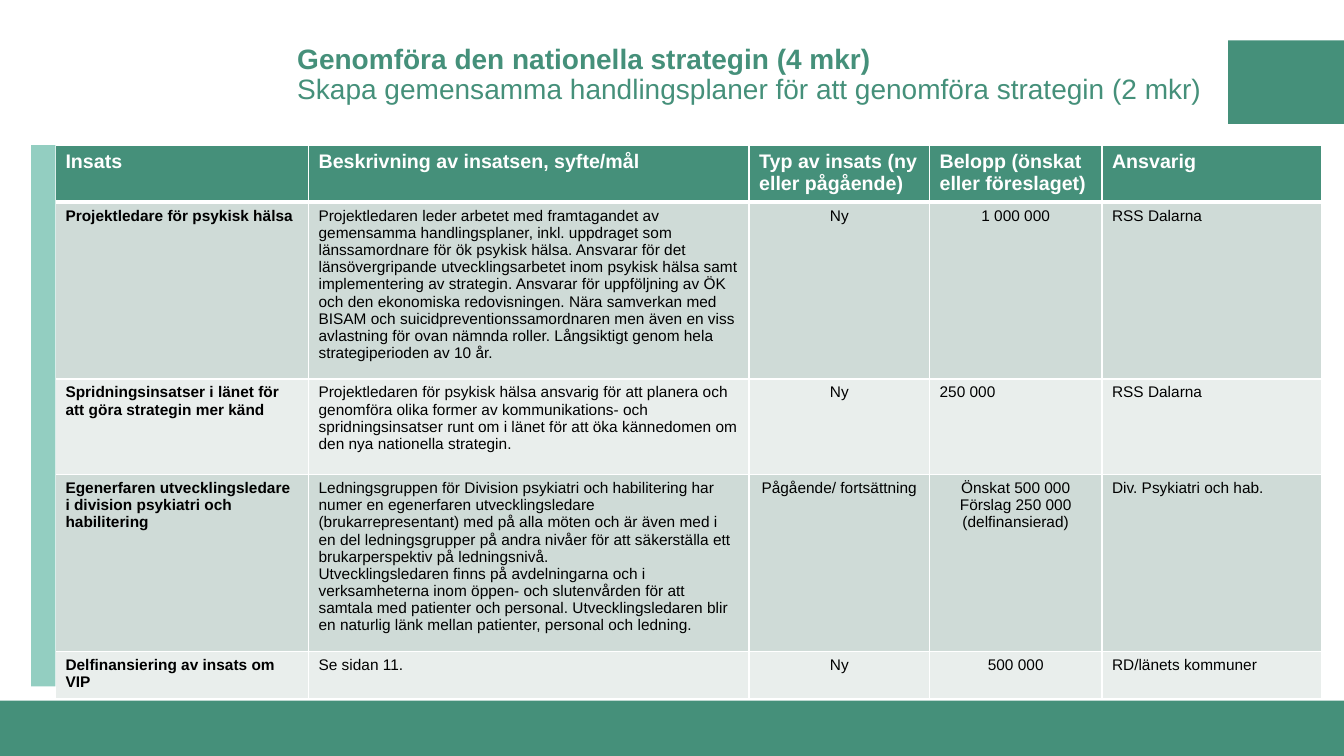
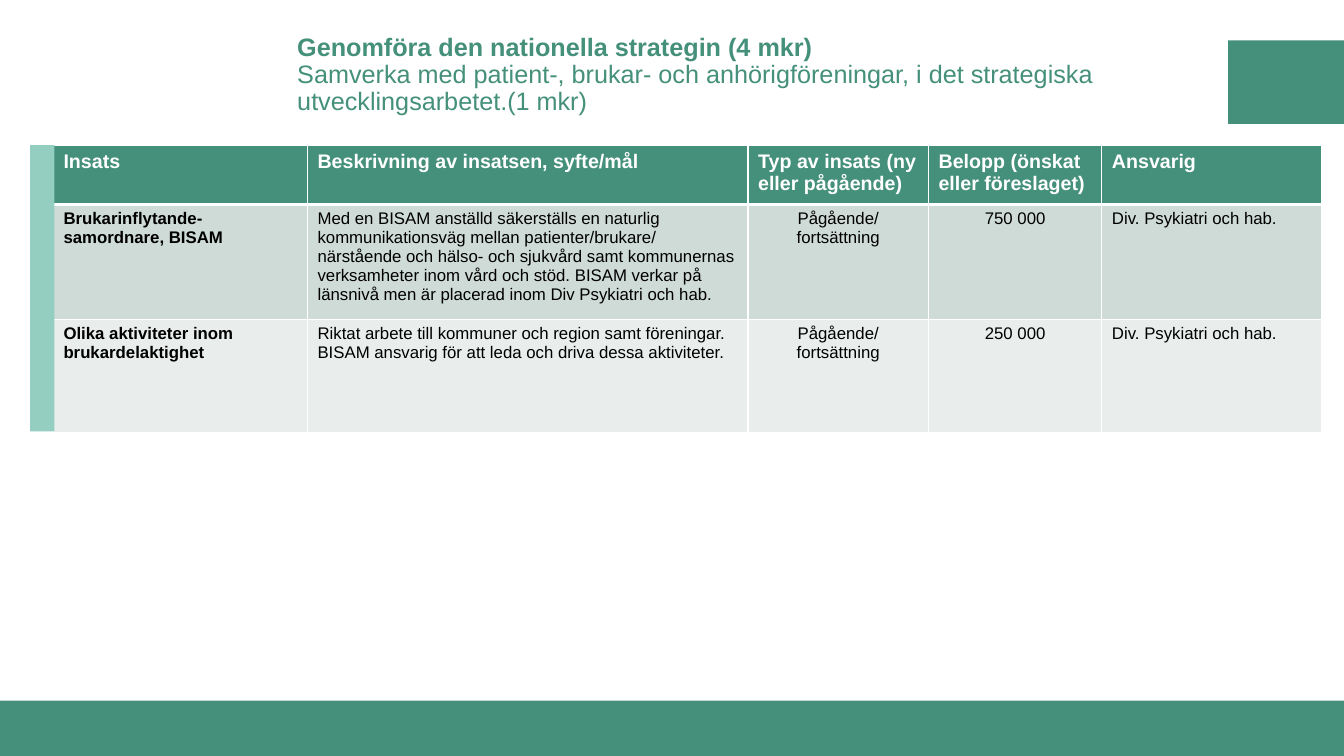
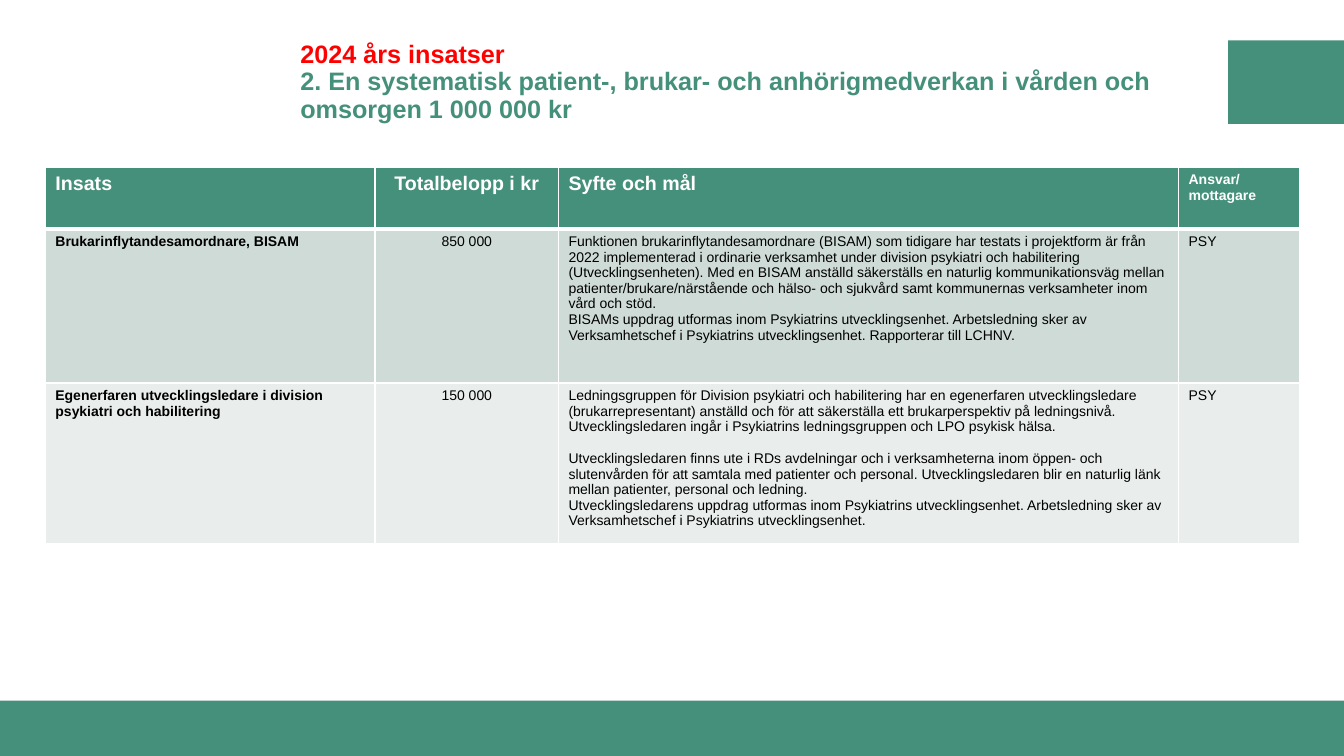
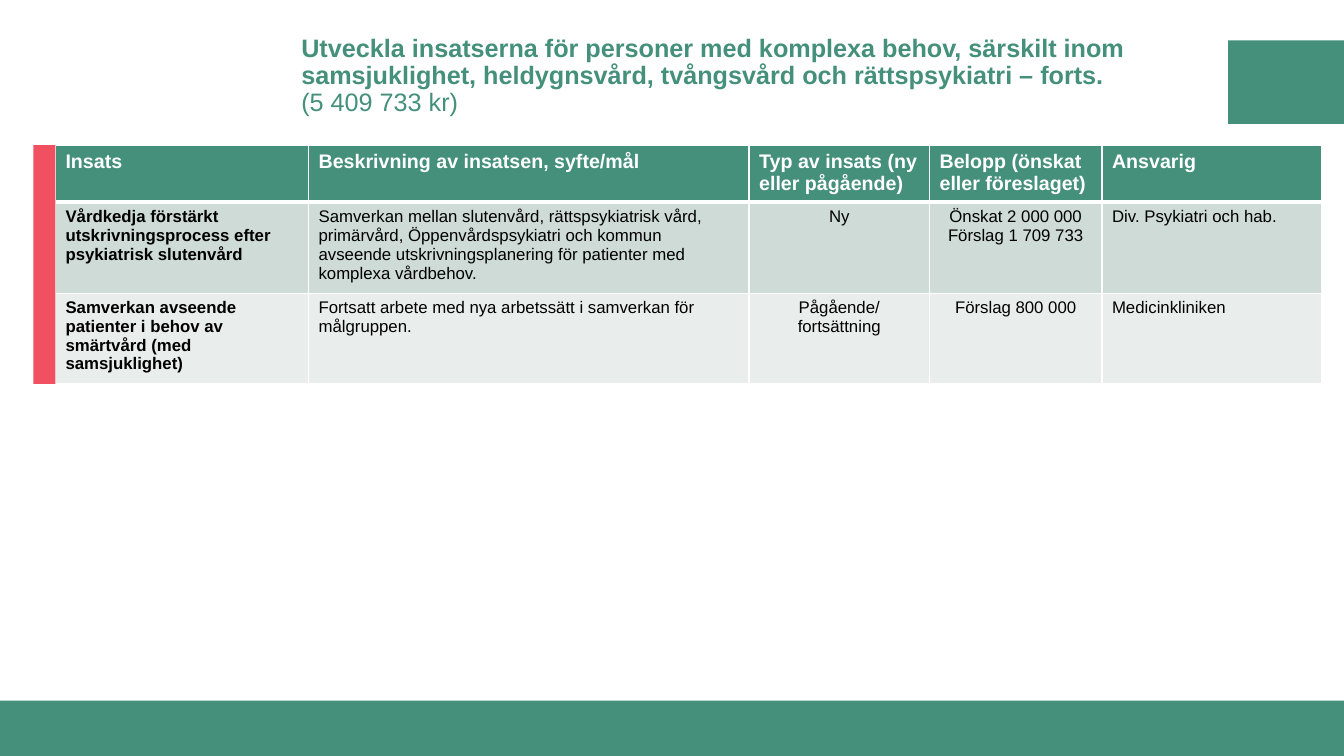
import pptx
import pptx.util
import pptx.dml.color
import pptx.enum.shapes
import pptx.enum.text
import pptx.oxml
import pptx.oxml.ns

Inches = pptx.util.Inches
ALIGN = pptx.enum.text.PP_ALIGN

FONT = "Arial"
COLOURS = {
    "green": "45907A", "mint": "93CEC1", "coral": "F15060", "red": "FF0000",
    "band_dark": "CFDBD7", "band_light": "E9EEEC", "white": "FFFFFF", "black": "000000",
}

# Content: paragraphs in a cell form a list; (text, points) adds space before
PLAN_HEADER = ["Insats", "Beskrivning av insatsen, syfte/mål", "Typ av insats (ny eller pågående)",
               "Belopp (önskat eller föreslaget)", "Ansvarig"]
PLAN = {"header": PLAN_HEADER, "header_sizes": [14] * 5, "centred": {2, 3}, "header_centred": set(),
        "columns": [2.51, 4.37, 1.79, 1.71, 2.18], "at": (0.55, 1.44)}
STRATEGY = "Genomföra den nationella strategin (4 mkr)"
ONGOING = "Pågående/ fortsättning"
PSYCHIATRY = "Div. Psykiatri och hab."

SLIDES = [
    {**PLAN,
     "title": [(STRATEGY, "green", True),
               ("Skapa gemensamma handlingsplaner för att genomföra strategin (2 mkr)", "green", False)],
     "title_size": 20, "title_at": (2.85, 0.38, 9.2, 0.74),
     "marker": (0.31, 0.24, 5.37, "mint"),
     "heights": [0.54, 1.63, 0.95, 1.63, 0.43], "size": 11, "left_cells": {(2, 3)},
     "rows": [
         ["Projektledare för psykisk hälsa",
          "Projektledaren leder arbetet med framtagandet av gemensamma handlingsplaner, inkl. uppdraget "
          "som länssamordnare för ök psykisk hälsa. Ansvarar för det länsövergripande utvecklingsarbetet "
          "inom psykisk hälsa samt implementering av strategin. Ansvarar för uppföljning av ÖK och den "
          "ekonomiska redovisningen. Nära samverkan med BISAM och suicidpreventionssamordnaren men även "
          "en viss avlastning för ovan nämnda roller. Långsiktigt genom hela strategiperioden av 10 år.",
          "Ny", "1 000 000", "RSS Dalarna"],
         ["Spridningsinsatser i länet för att göra strategin mer känd",
          "Projektledaren för psykisk hälsa ansvarig för att planera och genomföra olika former av "
          "kommunikations- och spridningsinsatser runt om i länet för att öka kännedomen om den nya "
          "nationella strategin.",
          "Ny", "250 000", "RSS Dalarna"],
         ["Egenerfaren utvecklingsledare i division psykiatri och habilitering",
          ["Ledningsgruppen för Division psykiatri och habilitering har numer en egenerfaren "
           "utvecklingsledare (brukarrepresentant) med på alla möten och är även med i en del "
           "ledningsgrupper på andra nivåer för att säkerställa ett brukarperspektiv på ledningsnivå.",
           "Utvecklingsledaren finns på avdelningarna och i verksamheterna inom öppen- och slutenvården "
           "för att samtala med patienter och personal. Utvecklingsledaren blir en naturlig länk mellan "
           "patienter, personal och ledning."],
          ONGOING, ["Önskat 500 000", "Förslag 250 000 (delfinansierad)"], PSYCHIATRY],
         ["Delfinansiering av insats om VIP", "Se sidan 11.", "Ny", "500 000", "RD/länets kommuner"],
     ]},
    {**PLAN,
     "title": [(STRATEGY, "green", True),
               ("Samverka med patient-, brukar- och anhörigföreningar, i det strategiska "
                "utvecklingsarbetet.(1 mkr)", "green", False)],
     "title_size": 18, "title_at": (2.85, 0.38, 9.2, 0.74),
     "marker": (0.3, 0.24, 2.84, "mint"),
     "at": (0.53, 1.44), "columns": [2.52, 4.37, 1.79, 1.72, 2.18],
     "heights": [0.59, 1.14, 1.12], "size": 12,
     "rows": [
         ["Brukarinflytande-samordnare, BISAM",
          "Med en BISAM anställd säkerställs en naturlig kommunikationsväg mellan patienter/brukare/ "
          "närstående och hälso- och sjukvård samt kommunernas verksamheter inom vård och stöd. BISAM "
          "verkar på länsnivå men är placerad inom Div Psykiatri och hab.",
          ONGOING, "750 000", PSYCHIATRY],
         ["Olika aktiviteter inom brukardelaktighet",
          "Riktat arbete till kommuner och region samt föreningar. BISAM ansvarig för att leda och "
          "driva dessa aktiviteter.",
          ONGOING, "250 000", PSYCHIATRY],
     ]},
    {"title": [("2024 års insatser", "red", True),
               ("2. En systematisk patient-, brukar- och anhörigmedverkan i vården och omsorgen "
                "1 000 000 kr", "green", True)],
     "title_size": 18, "title_at": (2.88, 0.29, 9.14, 1.06),
     "header": ["Insats", "Totalbelopp i kr", "Syfte och mål", "Ansvar/mottagare"],
     "header_sizes": [14, 14, 14, 10], "centred": {1}, "header_centred": {1},
     "at": (0.45, 1.66), "columns": [3.27, 1.82, 6.15, 1.2],
     "heights": [0.61, 1.53, 1.49], "size": 10,
     "rows": [
         ["Brukarinflytandesamordnare, BISAM", "850 000",
          ["Funktionen brukarinflytandesamordnare (BISAM) som tidigare har testats i projektform är från "
           "2022 implementerad i ordinarie verksamhet under division psykiatri och habilitering "
           "(Utvecklingsenheten). Med en BISAM anställd säkerställs en naturlig kommunikationsväg mellan "
           "patienter/brukare/närstående och hälso- och sjukvård samt kommunernas verksamheter inom "
           "vård och stöd.",
           "BISAMs uppdrag utformas inom Psykiatrins utvecklingsenhet. Arbetsledning sker av "
           "Verksamhetschef i Psykiatrins utvecklingsenhet. Rapporterar till LCHNV."],
          "PSY"],
         ["Egenerfaren utvecklingsledare i division psykiatri och habilitering", "150 000",
          ["Ledningsgruppen för Division psykiatri och habilitering har en egenerfaren utvecklingsledare "
           "(brukarrepresentant) anställd och för att säkerställa ett brukarperspektiv på ledningsnivå. "
           "Utvecklingsledaren ingår i Psykiatrins ledningsgruppen och LPO psykisk hälsa.",
           ("Utvecklingsledaren finns ute i RDs avdelningar och i verksamheterna inom öppen- och "
            "slutenvården för att samtala med patienter och personal. Utvecklingsledaren blir en "
            "naturlig länk mellan patienter, personal och ledning.", 11.3),
           "Utvecklingsledarens uppdrag utformas inom Psykiatrins utvecklingsenhet. Arbetsledning sker "
           "av Verksamhetschef i Psykiatrins utvecklingsenhet."],
          "PSY"],
     ]},
    {**PLAN,
     "title": [("Utveckla insatserna för personer med komplexa behov, särskilt inom samsjuklighet, "
                "heldygnsvård, tvångsvård och rättspsykiatri – forts.", "green", True),
               ("(5 409 733 kr)", "green", False)],
     "title_size": 18, "title_at": (2.89, 0.28, 9.2, 0.95),
     "marker": (0.33, 0.22, 2.37, "coral"),
     "heights": [0.54, 0.85, 0.84], "size": 12,
     "rows": [
         ["Vårdkedja förstärkt utskrivningsprocess efter psykiatrisk slutenvård",
          "Samverkan mellan slutenvård, rättspsykiatrisk vård, primärvård, Öppenvårdspsykiatri och "
          "kommun avseende utskrivningsplanering för patienter med komplexa vårdbehov.",
          "Ny", ["Önskat 2 000 000", "Förslag 1 709 733"], PSYCHIATRY],
         ["Samverkan avseende patienter i behov av smärtvård (med samsjuklighet)",
          "Fortsatt arbete med nya arbetssätt i samverkan för målgruppen.",
          ONGOING, "Förslag 800 000", "Medicinkliniken"],
     ]},
]


def rgb(name):
    return pptx.dml.color.RGBColor.from_string(COLOURS[name])


def style_font(font, colour, **values):
    for key, value in {"name": FONT, **values}.items():
        setattr(font, key, value)
    font.color.rgb = rgb(colour)


def add_bar(page, place, colour):
    bar = page.shapes.add_shape(pptx.enum.shapes.MSO_SHAPE.RECTANGLE, *map(Inches, place))
    bar.shadow.inherit = False
    bar.fill.solid()
    bar.fill.fore_color.rgb = rgb(colour)
    bar.line.fill.background()


def add_title(page, place, lines, size):
    frame = page.shapes.add_textbox(*map(Inches, place)).text_frame
    frame.word_wrap = True
    frame.vertical_anchor = pptx.enum.text.MSO_ANCHOR.MIDDLE
    para = frame.paragraphs[0]
    para.line_spacing = 0.9
    for index, (text, colour, bold) in enumerate(lines):
        if index:
            para.add_line_break()
        span = para.add_run()
        span.text = text
        style_font(span.font, colour, size=pptx.util.Pt(size), bold=bold)


def set_borders(cell, widths):
    """Draw white borders; widths are points for left, right, top, bottom."""
    for side, width in zip("LRTB", widths):
        cell._tc.get_or_add_tcPr().append(pptx.oxml.parse_xml(
            f'<a:ln{side} {pptx.oxml.ns.nsdecls("a")} w="{pptx.util.Pt(width)}"><a:solidFill>'
            f'<a:srgbClr val="{COLOURS["white"]}"/></a:solidFill></a:ln{side}>'))


def fill_cell(cell, content, fill, colour, size, bold, align):
    cell.fill.solid()
    cell.fill.fore_color.rgb = rgb(fill)
    frame = cell.text_frame
    for index, item in enumerate(content if isinstance(content, list) else [content]):
        text, gap = item if isinstance(item, tuple) else (item, 0)
        para = frame.add_paragraph() if index else frame.paragraphs[0]
        para.alignment = align
        if gap:
            para.space_before = pptx.util.Pt(gap)
        span = para.add_run()
        span.text = text
        style_font(span.font, colour, size=pptx.util.Pt(size), bold=bold)


def add_plan_table(page, data):
    rows = [data["header"], *data["rows"]]
    columns, heights = data["columns"], data["heights"]
    table = page.shapes.add_table(len(rows), len(columns), *map(
        Inches, (*data["at"], sum(columns), sum(heights)))).table
    table.horz_banding = False
    for column, width in zip(table.columns, columns):
        column.width = Inches(width)
    for r, (row, height) in enumerate(zip(rows, heights)):
        table.rows[r].height = Inches(height)
        header = r == 0
        fill = "green" if header else ("band_dark" if r % 2 else "band_light")
        centred = data["header_centred" if header else "centred"]
        for c, content in enumerate(row):
            cell = table.cell(r, c)
            set_borders(cell, (1, 1, 3 if r == 1 else 1, 3 if header else 1))
            middle = c in centred and (r, c) not in data.get("left_cells", ())
            fill_cell(cell, content, fill, "white" if header else "black",
                      data["header_sizes"][c] if header else data["size"],
                      header or c == 0, ALIGN.CENTER if middle else ALIGN.LEFT)


def main():
    deck = pptx.Presentation()
    deck.slide_width, deck.slide_height = Inches(13.33), Inches(7.5)
    for data in SLIDES:
        page = deck.slides.add_slide(deck.slide_layouts[6])
        # Shared corner block and footer band
        add_bar(page, (12.18, 0.4, 1.15, 0.83), "green")
        add_bar(page, (0, 6.95, 13.33, 0.55), "green")
        add_title(page, data["title_at"], data["title"], data["title_size"])
        add_plan_table(page, data)
        # Coloured marker beside the table
        if "marker" in data:
            left, width, height, colour = data["marker"]
            add_bar(page, (left, data["at"][1], width, height), colour)
    deck.save("out.pptx")


if __name__ == "__main__":
    main()
